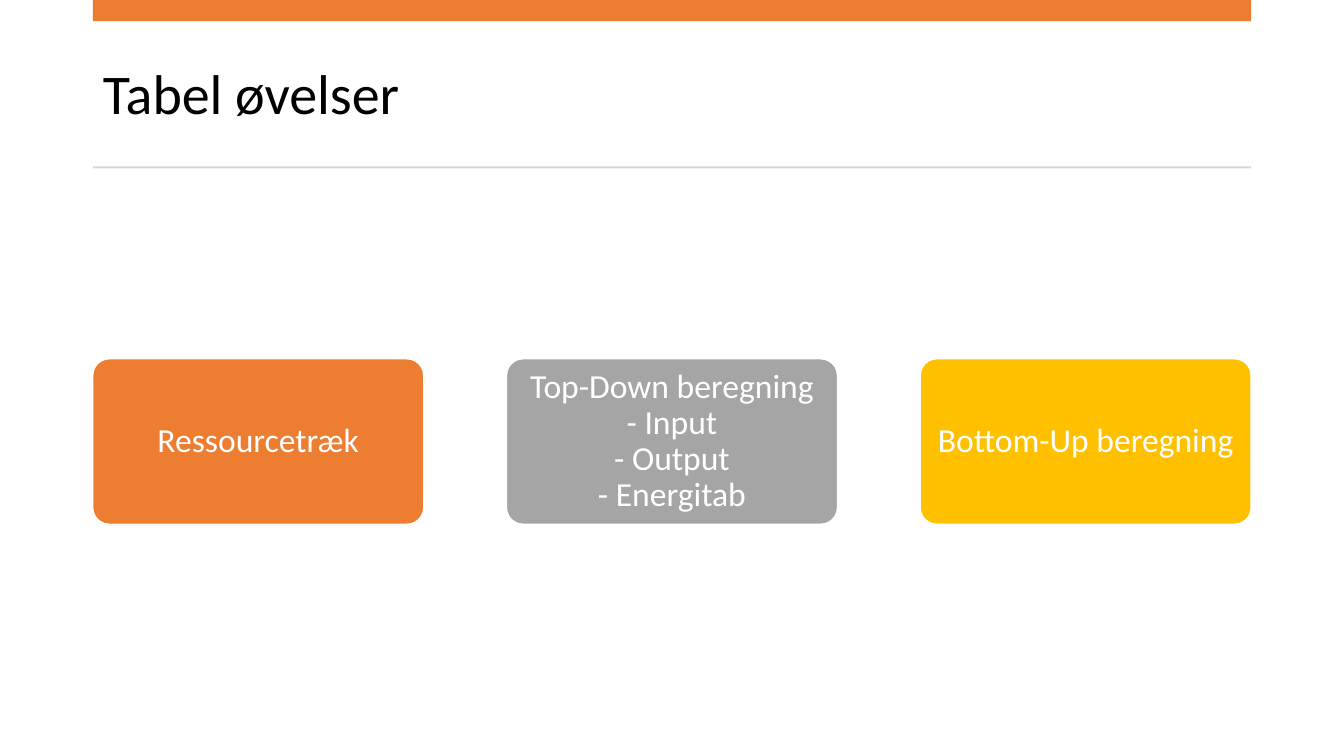
from pptx import Presentation
from pptx.dml.color import RGBColor
from pptx.enum.shapes import MSO_SHAPE
from pptx.enum.text import MSO_ANCHOR, MSO_AUTO_SIZE, PP_ALIGN
from pptx.util import Inches, Pt

BLACK = RGBColor(0x00, 0x00, 0x00)
WHITE = RGBColor(0xFF, 0xFF, 0xFF)
ORANGE = RGBColor(0xED, 0x7D, 0x31)
GREY = RGBColor(0xA5, 0xA5, 0xA5)
YELLOW = RGBColor(0xFF, 0xC0, 0x00)
RULE_GREY = RGBColor(0xD5, 0xD5, 0xD5)

FONT = "Calibri"
MARGIN, CONTENT_WIDTH = Inches(0.92), Inches(11.49)
CARDS = [
    (["Ressourcetræk"], ORANGE),
    (["Top-Down beregning", "- Input", "- Output", "- Energitab"], GREY),
    (["Bottom-Up beregning"], YELLOW),
]


def write(frame, lines, size, color, align):
    """Fill the frame with one paragraph, its lines parted by line breaks."""
    frame.word_wrap = True
    frame.auto_size = MSO_AUTO_SIZE.NONE
    frame.vertical_anchor = MSO_ANCHOR.MIDDLE
    para = frame.paragraphs[0]
    para.alignment = align
    para.line_spacing = 0.9
    for index, line in enumerate(lines):
        if index:
            para.add_line_break()
        span = para.add_run()
        span.text = line
        span.font.name = FONT
        span.font.size = Pt(size)
        span.font.color.rgb = color


def add_filled(page, kind, left, top, width, height, color):
    shape = page.shapes.add_shape(kind, left, top, width, height)
    shape.shadow.inherit = False
    shape.fill.solid()
    shape.fill.fore_color.rgb = color
    shape.line.fill.background()
    return shape


def add_header(page, left, width):
    title = page.shapes.title
    title.left, title.top = left, Inches(0.37)
    title.width, title.height = width, Inches(1.18)
    write(title.text_frame, ["Tabel øvelser"], 40, BLACK, PP_ALIGN.LEFT)
    add_filled(page, MSO_SHAPE.RECTANGLE, left, 0, width, Inches(0.21), ORANGE)
    add_filled(page, MSO_SHAPE.RECTANGLE, left, Inches(1.65), width, Inches(0.02), RULE_GREY)


def add_cards(page, left, middle, width):
    """Spread the cards over the width, with gaps a quarter of a card wide."""
    card_width = int(width / (len(CARDS) + (len(CARDS) - 1) / 4))
    card_height = card_width // 2
    for column, (lines, color) in enumerate(CARDS):
        card = add_filled(page, MSO_SHAPE.ROUNDED_RECTANGLE,
                          left + int(column * card_width * 1.25),
                          middle - card_height // 2, card_width, card_height, color)
        card.adjustments[0] = 0.1
        card.line.color.rgb = WHITE
        card.line.width = Pt(1)
        frame = card.text_frame
        frame.margin_left = frame.margin_right = Inches(0.05)
        frame.margin_top = frame.margin_bottom = Inches(0.03)
        write(frame, lines, 24, WHITE, PP_ALIGN.CENTER)


def main():
    deck = Presentation()
    deck.slide_width, deck.slide_height = Inches(13.33), Inches(7.5)
    page = deck.slides.add_slide(deck.slide_layouts.get_by_name("Title Only"))
    add_header(page, MARGIN, CONTENT_WIDTH)
    add_cards(page, MARGIN, Inches(4.38), CONTENT_WIDTH)
    deck.save("out.pptx")


if __name__ == "__main__":
    main()
